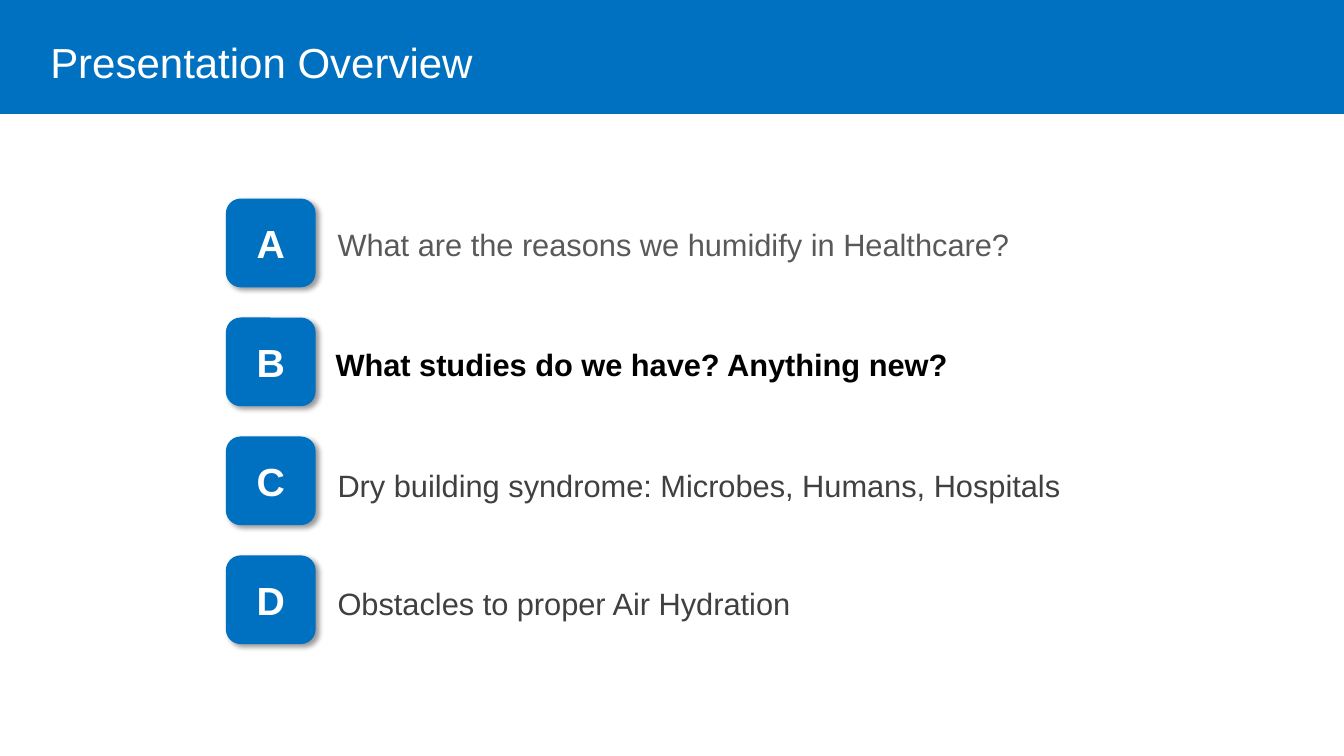
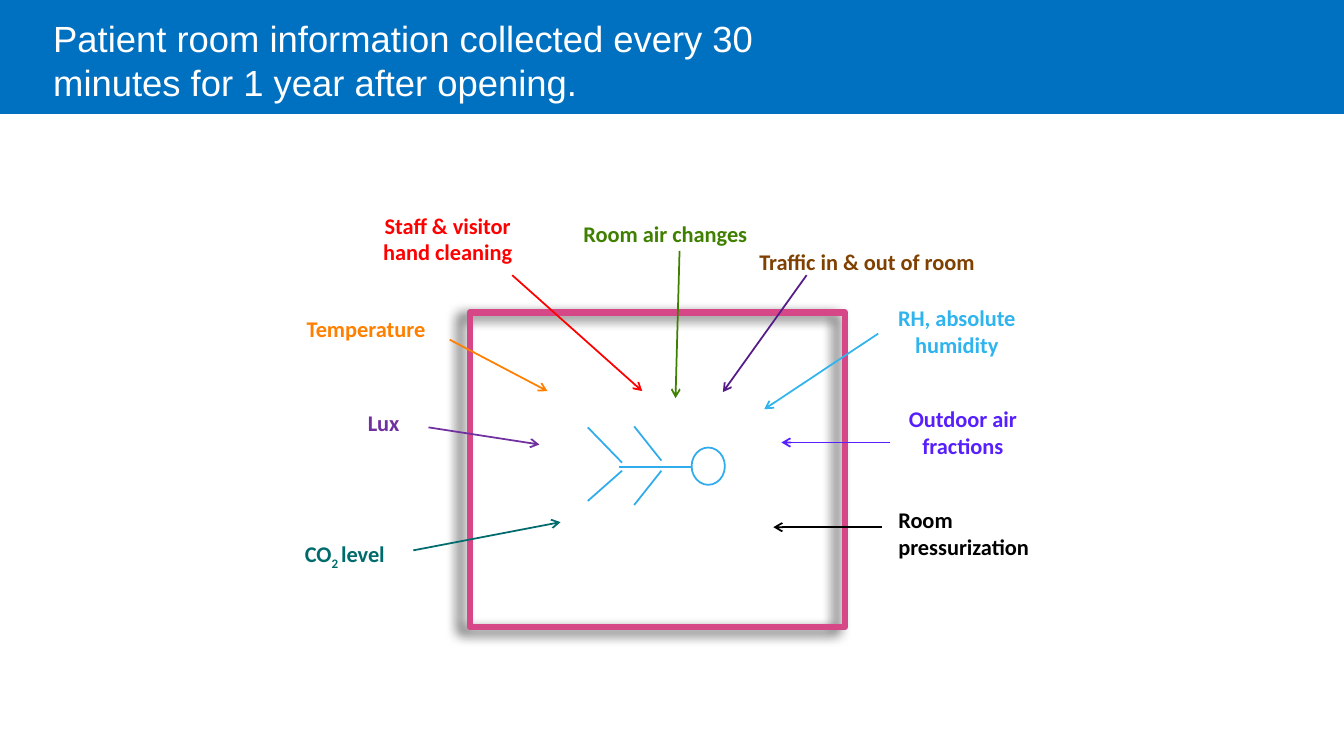
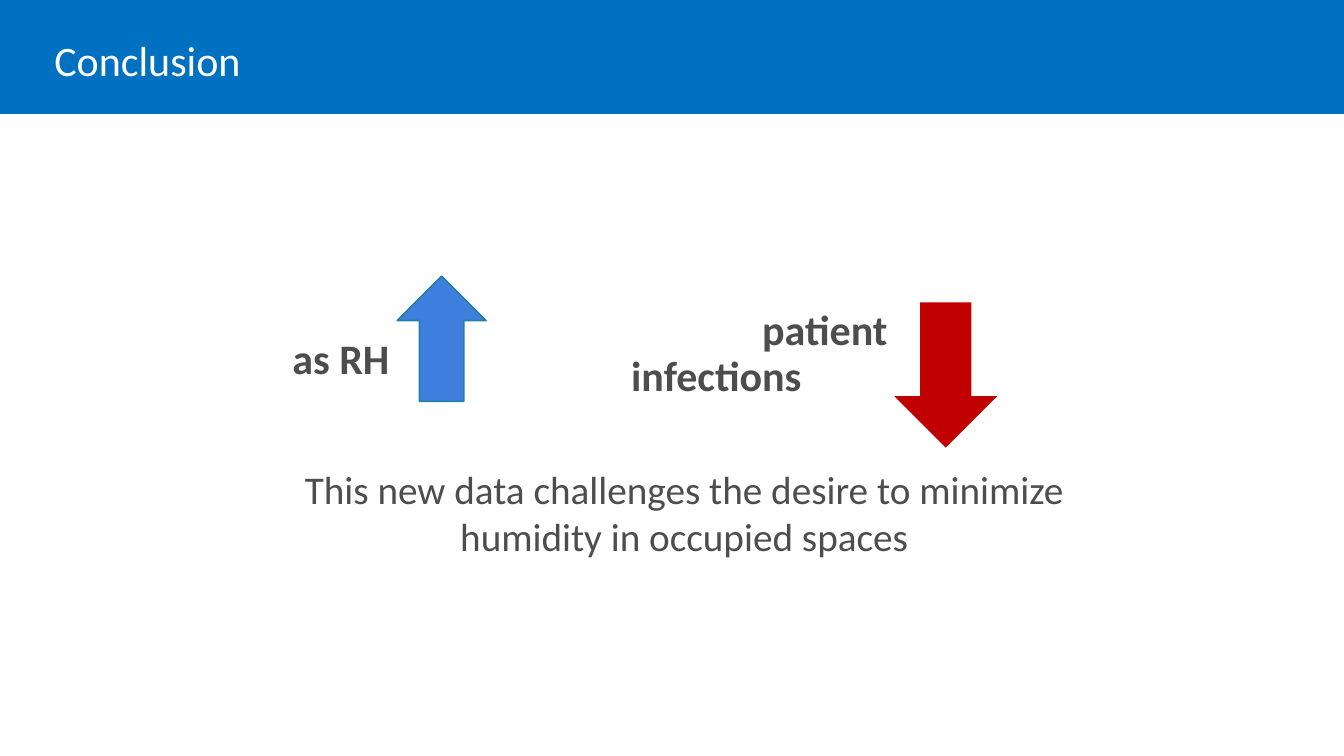
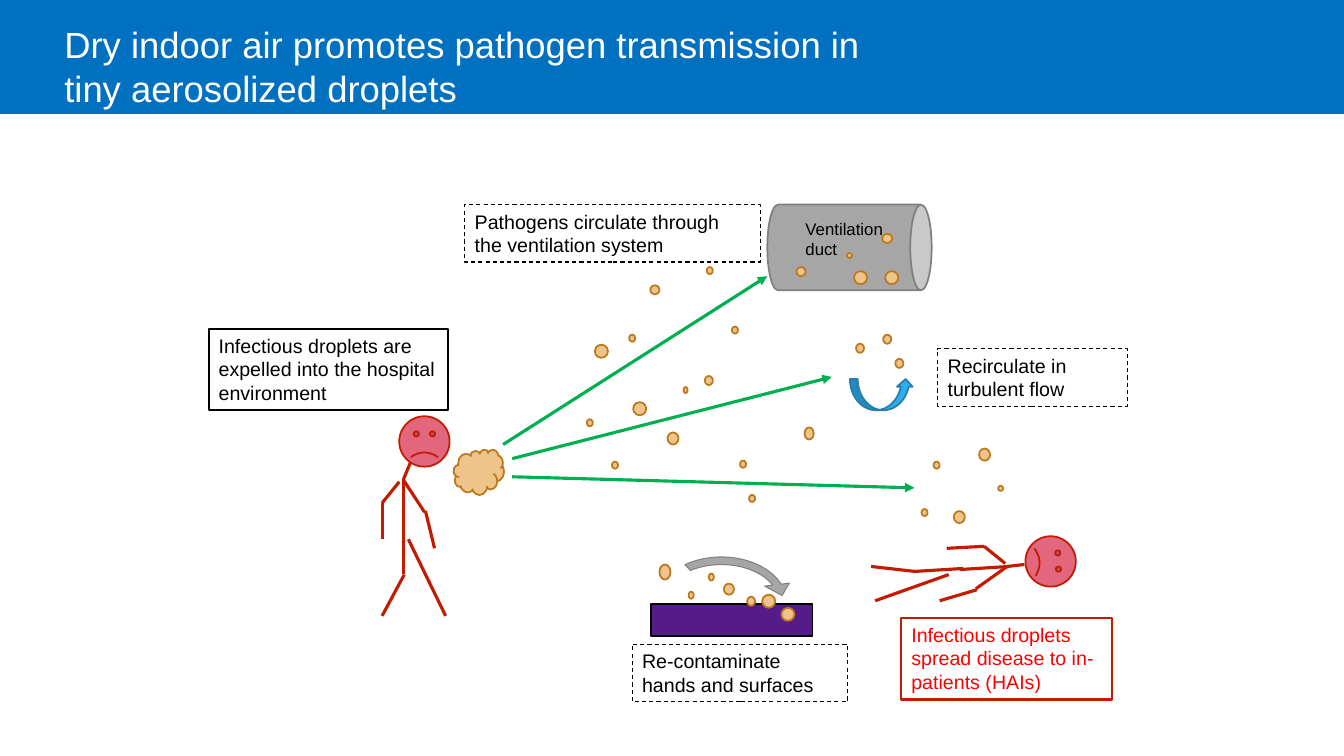
from dataclasses import dataclass

import lxml.etree
import pptx
import pptx.dml.color
import pptx.enum.dml
import pptx.enum.shapes
import pptx.enum.text
import pptx.oxml.ns
import pptx.util

Inches = pptx.util.Inches
Pt = pptx.util.Pt
SHAPE = pptx.enum.shapes.MSO_SHAPE
ALIGN = pptx.enum.text.PP_ALIGN
ANCHOR = pptx.enum.text.MSO_ANCHOR
Slide = pptx.slide.Slide
Box = tuple[float, float, float, float]
Point = tuple[float, float]

# Shared colours and sizes
BAND_BLUE, WHITE, BLACK, RED = "0070C0", "FFFFFF", "000000", "FF0000"
GREY_TEXT, SKY, ARROW_EDGE = "4D4D4D", "30ACEC", "247FAF"
SKIN, LIMB, DROPLET, DROPLET_EDGE = "E2667C", "C31A00", "EEC48B", "BC791C"
DUCT, DUCT_EDGE, PURPLE, AIRFLOW = "A6A6A6", "808080", "541B89", "00B050"
SLIDE_W, SLIDE_H, BAND_H = 13.33, 7.5, 1.13


@dataclass(frozen=True)
class TextStyle:
    size: float
    color: str
    font: str = "Arial"
    bold: bool = False
    align: ALIGN = ALIGN.LEFT
    anchor: ANCHOR = ANCHOR.TOP
    spacing: float = 1.0
    inset: Point = (0.1, 0.05)


@dataclass(frozen=True)
class Shadow:
    opacity: int
    blur: float
    distance: float
    angle: int


@dataclass(frozen=True)
class Topic:
    letter: str
    text: str
    left: float
    top: float
    style: TextStyle


@dataclass(frozen=True)
class Measure:
    text: str
    color: str
    box: Box
    start: Point
    end: Point
    align: ALIGN = ALIGN.CENTER
    arrow_color: str = ""


@dataclass(frozen=True)
class Callout:
    text: str
    box: Box
    edge: str = BLACK
    color: str = BLACK
    dashed: bool = True


# Drawing helpers
def rgb(color: str) -> pptx.dml.color.RGBColor:
    return pptx.dml.color.RGBColor.from_string(color)


def add_xml(parent, tag: str, **attributes):
    values = {key: str(value) for key, value in attributes.items()}
    return lxml.etree.SubElement(parent, pptx.oxml.ns.qn(tag), values)


def write(shape, text: str, style: TextStyle) -> None:
    frame = shape.text_frame
    frame.word_wrap = True
    frame.vertical_anchor = style.anchor
    frame.margin_left = frame.margin_right = Inches(style.inset[0])
    frame.margin_top = frame.margin_bottom = Inches(style.inset[1])
    frame.text = text
    paragraph = frame.paragraphs[0]
    paragraph.alignment = style.align
    paragraph.line_spacing = style.spacing
    for run in paragraph.runs:
        format_run(run, style)


def format_run(run, style: TextStyle) -> None:
    run.font.name = style.font
    run.font.size = Pt(style.size)
    run.font.bold = style.bold
    run.font.color.rgb = rgb(style.color)


def add_text(slide: Slide, box: Box, text: str, style: TextStyle):
    label = slide.shapes.add_textbox(*map(Inches, box))
    write(label, text, style)
    return label


def add_shape(slide: Slide, kind: SHAPE, box: Box, fill: str = "", edge: str = "",
              width: float = 1.25, rotation: float = 0, shadow: Shadow | None = None):
    shape = slide.shapes.add_shape(kind, *map(Inches, box))
    shape.rotation = rotation
    shape.shadow.inherit = False
    if fill:
        shape.fill.solid()
        shape.fill.fore_color.rgb = rgb(fill)
    else:
        shape.fill.background()
    if edge:
        shape.line.color.rgb = rgb(edge)
        shape.line.width = Pt(width)
    else:
        shape.line.fill.background()
    if shadow:
        effects = shape._element.spPr.find(pptx.oxml.ns.qn("a:effectLst"))
        outer = add_xml(effects, "a:outerShdw", blurRad=Pt(shadow.blur), dist=Pt(shadow.distance),
                        dir=shadow.angle * 60000, algn="ctr", rotWithShape=0)
        tint = add_xml(outer, "a:srgbClr", val=BLACK)
        add_xml(tint, "a:alpha", val=shadow.opacity * 1000)
    return shape


def add_line(slide: Slide, start: Point, end: Point, color: str, width: float,
             head: str = "") -> None:
    line = slide.shapes.add_connector(pptx.enum.shapes.MSO_CONNECTOR.STRAIGHT,
                                      *map(Inches, start + end))
    line.line.color.rgb = rgb(color)
    line.line.width = Pt(width)
    if head:
        add_xml(line.line._get_or_add_ln(), "a:tailEnd", type=head)
    add_xml(line._element.spPr, "a:effectLst")


def new_slide(deck, title: str, box: Box, size: float, font: str = "Arial") -> Slide:
    slide = deck.slides.add_slide(deck.slide_layouts[6])
    add_shape(slide, SHAPE.RECTANGLE, (0, 0, SLIDE_W, BAND_H), BAND_BLUE)
    add_text(slide, box, title, TextStyle(size, WHITE, font))
    return slide


# Slide 1: overview
def overview_slide(deck) -> None:
    slide = new_slide(deck, "Presentation Overview", (0.4, 0.31, 7.68, 0.58), 30)
    later = TextStyle(22, "404040", spacing=0.9)
    topics = [
        Topic("A", "What are the reasons we humidify in Healthcare?", 3.25, 2.19,
              TextStyle(22, "595959")),
        Topic("B", "What studies do we have? Anything new?", 3.23, 3.42,
              TextStyle(22, BLACK, bold=True, spacing=0.9)),
        Topic("C", "Dry building syndrome: Microbes, Humans, Hospitals", 3.25, 4.62, later),
        Topic("D", "Obstacles to proper Air Hydration", 3.25, 5.79, later),
    ]
    letter_style = TextStyle(28, WHITE, bold=True, align=ALIGN.CENTER, anchor=ANCHOR.MIDDLE)
    for row, topic in enumerate(topics):
        badge = add_shape(slide, SHAPE.ROUNDED_RECTANGLE, (2.24, 1.97 + 1.18 * row, 0.89, 0.88),
                          BAND_BLUE, shadow=Shadow(40, 4, 3, 45))
        write(badge, topic.letter, letter_style)
        add_text(slide, (topic.left, topic.top, 8, 0.46), topic.text, topic.style)


# Slide 2: patient room measures
def patient_room_slide(deck) -> None:
    slide = new_slide(deck, "Patient room information collected every 30 minutes "
                      "for 1 year after opening.", (0.43, 0.11, 8.46, 0.95), 26)
    add_shape(slide, SHAPE.RECTANGLE, (4.66, 3.1, 3.72, 3.12), edge="D64787", width=4.5,
              shadow=Shadow(70, 9, 7, 160))

    # Measures with their arrows
    measures = [
        Measure("Staff & visitor hand cleaning", RED, (3.58, 2.06, 1.72, 0.62),
                (5.08, 2.73), (6.37, 3.88)),
        Measure("Room air changes", "408000", (5.67, 2.14, 1.86, 0.35),
                (6.74, 2.49), (6.7, 3.95)),
        Measure("Traffic in & out of room", "804000", (7.37, 2.42, 2.46, 0.35),
                (8, 2.73), (7.17, 3.89), arrow_color=PURPLE),
        Measure("RH, absolute humidity", "30B4EE", (8.75, 2.98, 1.48, 0.62),
                (8.71, 3.31), (7.58, 4.06)),
        Measure("Outdoor air fractions", "571FFC", (8.92, 3.98, 1.26, 0.62),
                (8.83, 4.39), (7.75, 4.39)),
        Measure("Room pressurization", BLACK, (8.83, 4.98, 1.65, 0.62),
                (8.75, 5.23), (7.67, 5.23), ALIGN.LEFT),
        Measure("Temperature", "FF8000", (2.82, 3.09, 1.62, 0.35), (4.46, 3.37), (5.43, 3.88)),
        Measure("Lux", "7030A0", (3.24, 4.02, 1.13, 0.35), (4.25, 4.24), (5.35, 4.41)),
        Measure("CO", "006B6C", (2.57, 5.32, 1.7, 0.35), (4.1, 5.46), (5.56, 5.18)),
    ]
    for measure in measures:
        style = TextStyle(16, measure.color, "Calibri", True, measure.align, inset=(0.08, 0.04))
        label = add_text(slide, measure.box, measure.text, style)
        if measure.text == "CO":
            for text, baseline in (("2 ", -25000), ("level", 0)):
                run = label.text_frame.paragraphs[0].add_run()
                run.text = text
                format_run(run, style)
                run._r.get_or_add_rPr().set("baseline", str(baseline))
        add_line(slide, measure.start, measure.end, measure.arrow_color or measure.color,
                 1.25, "arrow")

    # Patient
    add_shape(slide, SHAPE.FLOWCHART_CONNECTOR, (6.86, 4.44, 0.33, 0.37), WHITE, SKY)
    patient_limbs = [
        ((6.86, 4.63), (6.14, 4.63)), ((6.17, 4.59), (5.83, 4.24)), ((6.17, 4.67), (5.83, 4.97)),
        ((6.56, 4.57), (6.29, 4.23)), ((6.29, 5.01), (6.56, 4.67)),
    ]
    for start, end in patient_limbs:
        add_line(slide, start, end, SKY, 1.25)


# Slide 3: conclusion
def conclusion_slide(deck) -> None:
    slide = new_slide(deck, "Conclusion", (0.44, 0.29, 7.58, 0.63), 30, "Calibri")
    add_text(slide, (2.74, 4.57, 8.09, 1.09),
             "This new data challenges the desire to minimize humidity in occupied spaces",
             TextStyle(28, GREY_TEXT, "Calibri", align=ALIGN.CENTER))
    trend = TextStyle(30, GREY_TEXT, "Calibri", True, spacing=0.9, inset=(0.07, 0.04))
    add_text(slide, (2.83, 3.32, 1.27, 0.66), "as RH", trend)
    infections = add_text(slide, (6.13, 3.03, 2.95, 0.99), "patient infections", trend)
    indents = infections.text_frame.paragraphs[0]._p.get_or_add_pPr()
    indents.set("marL", str(Inches(0.06)))
    indents.set("indent", str(Inches(1.3)))
    add_shape(slide, SHAPE.UP_ARROW, (3.94, 2.74, 0.88, 1.24), "3F7FDD", ARROW_EDGE)
    add_shape(slide, SHAPE.DOWN_ARROW, (8.87, 3, 1.02, 1.44), "C00000")


# Slide 4: droplet transmission
def add_person(slide: Slide, limbs: list[tuple[Point, Point]], head: Point,
               rotation: float = 0) -> None:
    for start, end in limbs:
        add_line(slide, start, end, LIMB, 2.25)
    face = add_shape(slide, SHAPE.SMILEY_FACE, (*head, 0.5, 0.5), SKIN, LIMB, rotation=rotation)
    face.adjustments[0] = -0.047


def transmission_slide(deck) -> None:
    slide = new_slide(deck, "Dry indoor air promotes pathogen transmission in tiny "
                      "aerosolized droplets", (0.54, 0.17, 8.14, 0.95), 26)

    # Coughing person and in-patient
    standing_limbs = [
        ((4.07, 4.59), (4, 4.76)), ((4, 4.74), (4, 5.69)), ((4, 4.76), (4.21, 5.08)),
        ((4.22, 5.07), (4.31, 5.44)), ((3.96, 4.78), (3.79, 4.99)), ((3.79, 4.99), (3.79, 5.35)),
        ((4.05, 5.35), (4.42, 6.11)), ((4.01, 5.7), (3.79, 6.11)),
    ]
    add_person(slide, standing_limbs, (3.96, 4.13))
    lying_limbs = [
        ((10.16, 5.6), (9.99, 5.62)), ((10.01, 5.62), (9.52, 5.65)), ((9.55, 5.64), (9.06, 5.67)),
        ((9.99, 5.62), (9.68, 5.84)), ((9.69, 5.85), (9.32, 5.96)), ((9.97, 5.59), (9.76, 5.42)),
        ((9.76, 5.42), (9.39, 5.44)), ((9.41, 5.7), (8.68, 5.96)), ((9.08, 5.67), (8.64, 5.62)),
    ]
    add_person(slide, lying_limbs, (10.17, 5.32), 87.3)

    # Airflow from the cough
    airflows = [((4.99, 4.41), (7.61, 2.74)), ((5.08, 4.55), (8.25, 3.74)),
                ((5.08, 4.73), (9.07, 4.84))]
    for start, end in airflows:
        add_line(slide, start, end, AIRFLOW, 2.25, "triangle")
    add_shape(slide, SHAPE.CLOUD, (4.5, 4.46, 0.5, 0.45), DROPLET, DROPLET_EDGE)

    # Ventilation duct, turbulence and contaminated surface
    add_shape(slide, SHAPE.CAN, (8, 1.64, 0.85, 1.63), DUCT, DUCT_EDGE, rotation=90)
    add_text(slide, (7.89, 2.12, 1.05, 0.5), "Ventilation duct", TextStyle(12, BLACK))
    add_shape(slide, SHAPE.CURVED_UP_ARROW, (8.43, 3.76, 0.63, 0.31), SKY, ARROW_EDGE)
    add_shape(slide, SHAPE.RECTANGLE, (6.46, 5.99, 1.6, 0.32), PURPLE, BLACK)

    # Droplets, grouped by size
    droplets: dict[Point, list[Point]] = {
        (0.13, 0.13): [(5.9, 3.42), (6.28, 3.99), (8.78, 2.69), (8.47, 2.69), (7.56, 5.9),
                       (7.75, 6.03)],
        (0.11, 0.12): [(6.62, 4.29), (9.71, 4.45), (9.46, 5.07)],
        (0.08, 0.09): [(8.49, 3.41), (8.88, 3.56), (6.99, 3.73), (8.76, 3.32), (7.41, 5.92)],
        (0.06, 0.07): [(6.24, 3.32), (5.82, 4.16), (6.07, 4.58), (7.01, 2.65), (9.26, 4.58),
                       (7.34, 4.57), (7.26, 3.24), (7.43, 4.91), (9.14, 5.05)],
        (0.05, 0.07): [(6.83, 5.87), (7.03, 5.69)],
        (0.05, 0.05): [(9.9, 4.82), (8.4, 2.51)],
        (0.04, 0.06): [(6.78, 3.84)],
        (0.09, 0.09): [(6.45, 2.83), (7.9, 2.65)],
        (0.09, 0.12): [(7.98, 4.24)],
        (0.1, 0.09): [(8.75, 2.32)],
        (0.1, 0.11): [(7.18, 5.79)],
        (0.11, 0.15): [(6.54, 5.6)],
    }
    for size, corners in droplets.items():
        for corner in corners:
            add_shape(slide, SHAPE.OVAL, corner + size, DROPLET, DROPLET_EDGE)
    settling = add_shape(slide, SHAPE.CIRCULAR_ARROW, (6.42, 5.44, 1.47, 1.08), DUCT, DUCT_EDGE,
                         0.75)
    for index, value in enumerate((0.07, 6.75, 205.149, 135.723, 0.114)):
        settling.adjustments[index] = value

    # Callouts
    callouts = [
        Callout("Pathogens circulate through the ventilation system", (4.61, 2.03, 2.93, 0.57)),
        Callout("Re-contaminate hands and surfaces", (6.27, 6.39, 2.14, 0.57)),
        Callout("Recirculate in turbulent flow", (9.3, 3.46, 1.88, 0.57)),
        Callout("Infectious droplets spread disease to in-patients (HAIs)",
                (8.94, 6.13, 2.09, 0.81), LIMB, RED, False),
        Callout("Infectious droplets are expelled into the hospital environment",
                (2.07, 3.26, 2.37, 0.81), dashed=False),
    ]
    for callout in callouts:
        frame = add_shape(slide, SHAPE.RECTANGLE, callout.box, edge=callout.edge,
                          width=0.75 if callout.dashed else 1.5)
        if callout.dashed:
            frame.line.dash_style = pptx.enum.dml.MSO_LINE.DASH
        write(frame, callout.text, TextStyle(14, callout.color))


def main() -> None:
    deck = pptx.Presentation()
    deck.slide_width, deck.slide_height = Inches(SLIDE_W), Inches(SLIDE_H)
    overview_slide(deck)
    patient_room_slide(deck)
    conclusion_slide(deck)
    transmission_slide(deck)
    deck.save("out.pptx")


if __name__ == "__main__":
    main()
